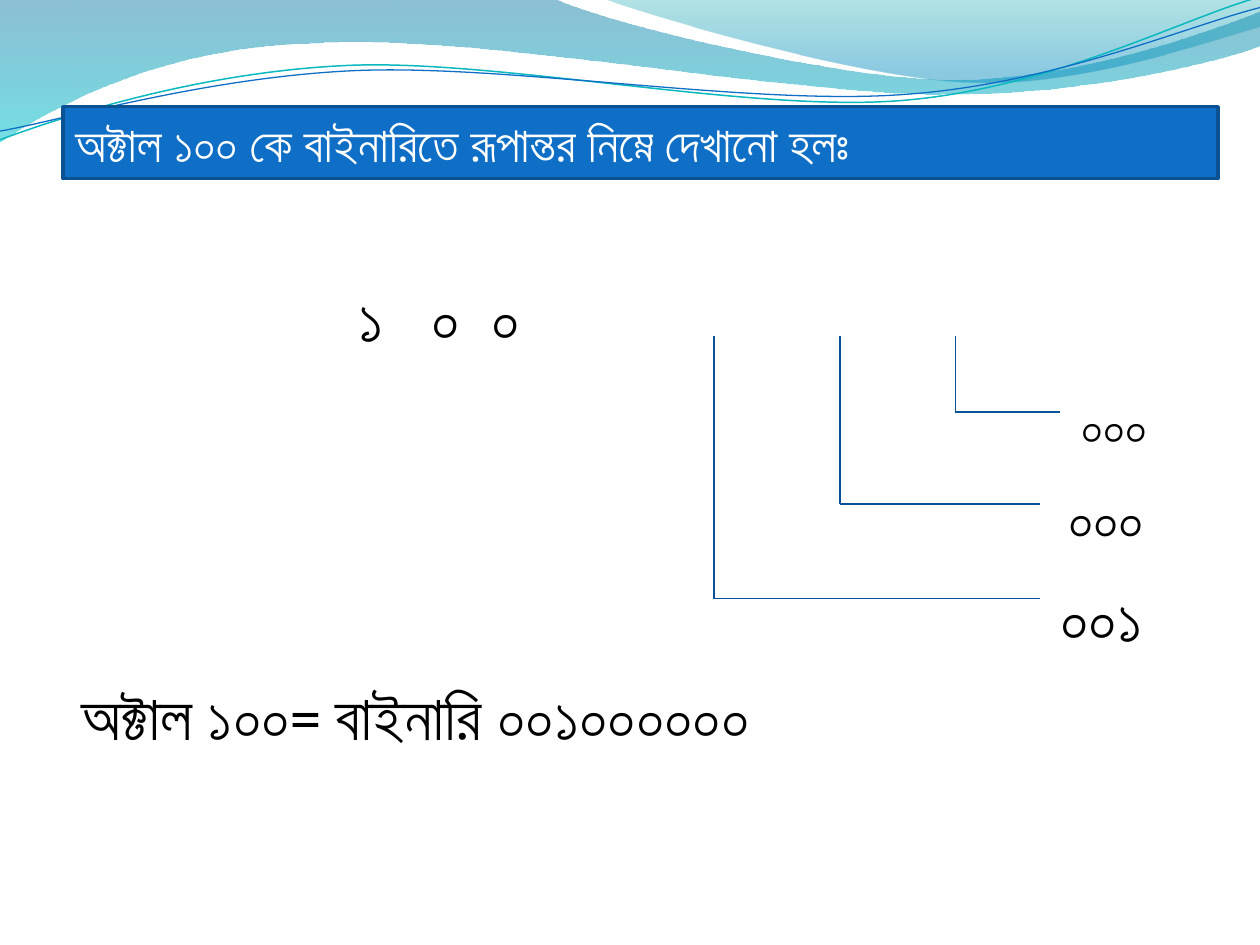
from pptx import Presentation
from pptx.dml.color import RGBColor
from pptx.enum.shapes import MSO_CONNECTOR, MSO_SHAPE
from pptx.enum.text import MSO_ANCHOR, PP_ALIGN
from pptx.oxml.ns import qn
from pptx.util import Pt
from lxml.etree import SubElement

THEME = {
    "heading_font": "Calibri", "body_font": "TeX Gyre Pagella",
    "white": "FFFFFF", "black": "000000",
    "blue": "0F6FC6", "border": "0B5292", "bracket": "095295", "teal": "0AB8BF",
    "small": 28, "medium": 32, "large": 36,
}

# Content
TITLE = "অক্টাল ১০০ কে বাইনারিতে রূপান্তর নিম্নে দেখানো হলঃ"
DIGITS = ["১", "০", "০"]
DIGIT_STOPS = [161.5, 203.6, 237.6]
RESULT = "অক্টাল ১০০= বাইনারি ০০১০০০০০০"
BRACKET_TOP = 192
# Bracket x, bottom and right end; label, its left, top, width and type size
BRACKETS = [
    (546, 235.4, 606, "০০০", 610.6, 223.2, 109.4, "small"),
    (480, 288, 594, "০০০", 603.4, 273.6, 92.9, "medium"),
    (408, 342, 594, "০০১", 599, 327.6, 115.2, "large"),
]

# Outlines: a start point, then (x, y) lines or six-number Bezier curves
FILLED_WAVES = [
    ((0, 0), [
        (316.8, -0.7),
        (342.7, 12.2, 478.1, 45.4, 545.8, 45.4),
        (614.2, 45.4, 689.8, 18.7, 720, 6.5),
        (720.7, 25.9),
        (707.8, 31.7, 626.4, 54.7, 537.1, 54),
        (447.8, 54, 275, 20.2, 185, 24.5),
        (92.9, 25.9, 33.1, 59.8, -0.7, 81.4),
    ], [(0, "0074A1", 45), (1, "00C6CF", 55)]),
    ((344.9, -0.7), [
        (366.5, 7.9, 491, 44.6, 553.7, 46.8),
        (616.3, 49.7, 691.9, 23, 720, 15.1),
        (720, 0),
    ], [(0, "00A1A9", 30), (0.8, "008BBF", 45)]),
]
LINE_WAVES = [
    ((0, 79.9), [
        (34.6, 67, 113.8, 41, 199.4, 37.4),
        (284.4, 33.8, 427, 64.1, 513.4, 57.6),
        (599.8, 51.1, 675.4, 10.8, 718.6, -1.4),
    ], "teal", 0.85),
    ((0, 74.9), [
        (33.8, 69.1, 118.1, 43.9, 203.8, 40.3),
        (290.2, 36.7, 429.8, 60.5, 516.2, 54),
        (601.9, 48.2, 677.5, 15.1, 720, 4.3),
    ], "blue", 0.75),
]


def color(name):
    return RGBColor.from_string(THEME[name])


def add_wave(slide, start, segments, close):
    points = [(Pt(s[i]), Pt(s[i + 1])) for s in segments for i in range(0, len(s), 2)]
    builder = slide.shapes.build_freeform(Pt(start[0]), Pt(start[1]))
    builder.add_line_segments(points, close=close)
    shape = builder.convert_to_shape()
    shape.shadow.inherit = False
    # Join each curve's two control points and its end into one Bezier command
    steps = iter(list(shape._element.spPr.iter(qn("a:lnTo"))))
    for segment in segments:
        first = next(steps)
        if len(segment) == 6:
            curve = first.makeelement(qn("a:cubicBezTo"))
            first.addprevious(curve)
            for step in (first, next(steps), next(steps)):
                curve.append(step[0])
                step.getparent().remove(step)
    return shape


def fill_gradient(shape, stops):
    shape.fill.gradient()
    shape.fill.gradient_angle = 270
    for stop, (position, rgb, _) in zip(shape.fill.gradient_stops, stops):
        stop.position = position
        stop.color.rgb = RGBColor.from_string(rgb)
    for element, (_, _, opacity) in zip(shape._element.spPr.iter(qn("a:srgbClr")), stops):
        SubElement(element, qn("a:alpha")).set("val", str(opacity * 1000))


def write_text(shape, text, font="body_font", size="large", ink="black"):
    frame = shape.text_frame
    frame.word_wrap = True
    paragraph = frame.paragraphs[0]
    paragraph.alignment = PP_ALIGN.LEFT
    run = paragraph.add_run()
    run.text = text
    run.font.name = THEME[font]
    run.font.size = Pt(THEME[size])
    run.font.color.rgb = color(ink)
    return paragraph


def add_text(slide, text, left, top, width, size="large", font="body_font"):
    height = THEME[size] * 1.2 + 7.4
    box = slide.shapes.add_textbox(Pt(left), Pt(top), Pt(width), Pt(height))
    return write_text(box, text, font=font, size=size)


def add_line(slide, x1, y1, x2, y2):
    line = slide.shapes.add_connector(MSO_CONNECTOR.STRAIGHT, Pt(x1), Pt(y1), Pt(x2), Pt(y2))
    line.line.color.rgb = color("bracket")
    line.line.width = Pt(0.75)
    SubElement(line._element.spPr, qn("a:effectLst"))


def main():
    presentation = Presentation()
    presentation.slide_width, presentation.slide_height = Pt(720), Pt(540)
    slide = presentation.slides.add_slide(presentation.slide_layouts[6])

    # Waves along the top
    for start, segments, stops in FILLED_WAVES:
        wave = add_wave(slide, start, segments, close=True)
        fill_gradient(wave, stops)
        wave.line.fill.background()
    for start, segments, ink, width in LINE_WAVES:
        wave = add_wave(slide, start, segments, close=False)
        wave.fill.background()
        wave.line.color.rgb = color(ink)
        wave.line.width = Pt(width)

    # Title bar
    bar = slide.shapes.add_shape(MSO_SHAPE.RECTANGLE, Pt(36), Pt(61), Pt(660), Pt(41))
    bar.shadow.inherit = False
    bar.fill.solid()
    bar.fill.fore_color.rgb = color("blue")
    bar.line.color.rgb = color("border")
    bar.line.width = Pt(2)
    bar.text_frame.vertical_anchor = MSO_ANCHOR.MIDDLE
    write_text(bar, TITLE, font="heading_font", size="small", ink="white")

    # Octal digits, spaced by tab stops
    digits = add_text(slide, "".join("\t" + digit for digit in DIGITS), 36, 156, 624)
    tabs = SubElement(digits._p.get_or_add_pPr(), qn("a:tabLst"))
    for stop in DIGIT_STOPS:
        tab = SubElement(tabs, qn("a:tab"))
        tab.set("pos", str(Pt(stop)))
        tab.set("algn", "l")

    # Brackets leading to the binary groups
    for x, bottom, right, label, left, top, width, size in BRACKETS:
        add_line(slide, x, BRACKET_TOP, x, bottom)
        add_line(slide, x, bottom, right, bottom)
        add_text(slide, label, left, top, width, size=size)

    # Result
    add_text(slide, RESULT, 39.3, 383.5, 672, font="heading_font")
    presentation.save("out.pptx")


if __name__ == "__main__":
    main()
